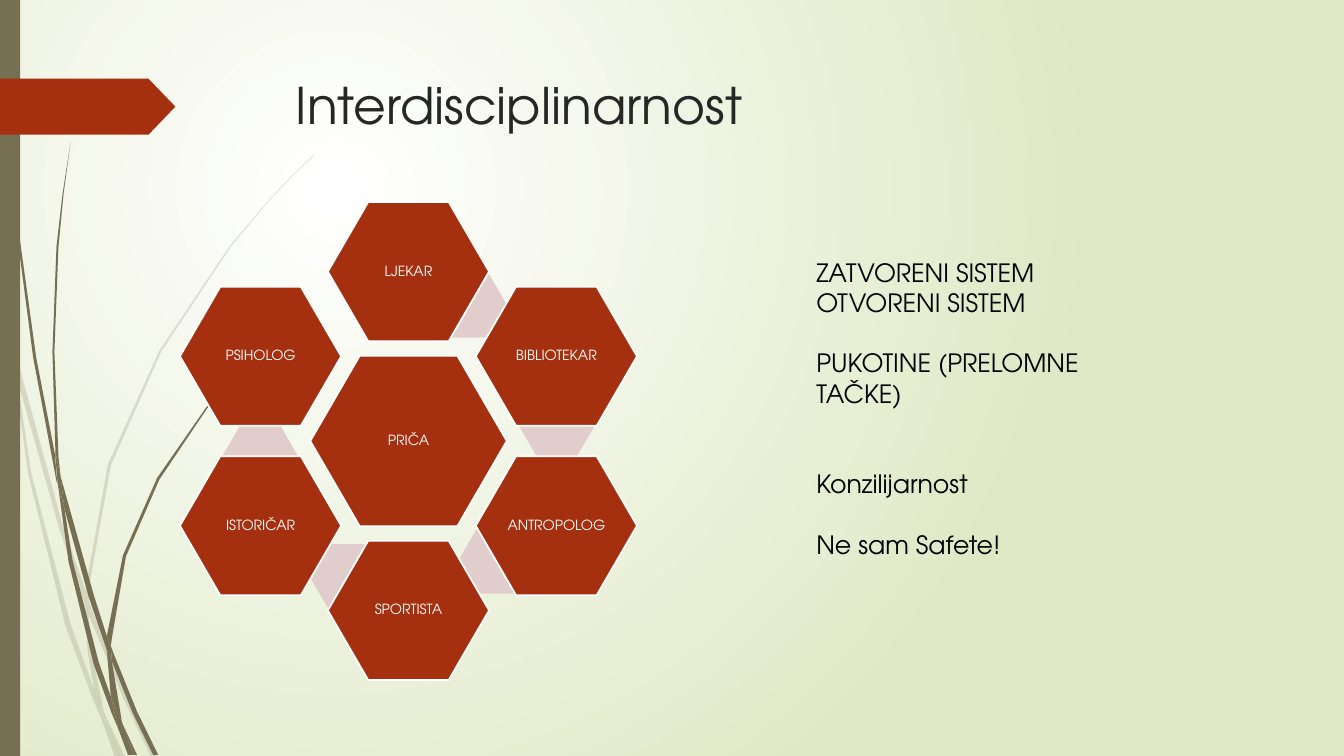
from math import cos, radians, sin

from lxml.etree import SubElement
from pptx import Presentation
from pptx.dml.color import RGBColor
from pptx.enum.shapes import MSO_SHAPE as Preset
from pptx.enum.text import MSO_ANCHOR as Anchor, PP_ALIGN as Align
from pptx.oxml.ns import qn
from pptx.util import Pt

FONT = "TeX Gyre Adventor"
RUST, OLIVE, ROSE, WHITE = "A53010", "766F54", "E1CDCC", "FFFFFF"
CENTER = (291.8, 315)
CELL_RING, LINK_RING, LINK_TURN = (122, 121), (106.4, 106), 24.5
ROLES = ["LJEKAR", "BIBLIOTEKAR", "ANTROPOLOG", "SPORTISTA", "ISTORIČAR", "PSIHOLOG"]
NOTES = [
    ("ZATVORENI SISTEM\vOTVORENI SISTEM", 0),
    ("PUKOTINE (PRELOMNE TAČKE)", 21.6),
    ("Konzilijarnost", 43.2),
    ("Ne sam Safete!", 21.6),
]
GRASS_UNIT = 0.72
PALE_GRASS = [
    [(11, 350), (9, 322), (0, 282), (0, 299), (10, 344)],
    [(58, 522), (84, 599), (85, 586), (62, 520), (14, 345), (17, 376)],
    [(92, 607), (88, 596), (88, 610), (123, 694), (150, 751), (155, 751), (127, 692)],
    [(119, 751), (124, 751), (105, 711)],
    [(93, 683), (70, 619), (31, 469), (17, 376), (11, 350), (28, 470), (65, 621),
     (92, 693), (101, 714), (99, 707)],
    [(84, 599), (87, 646), (93, 683), (96, 692), (105, 711), (103, 706), (91, 646),
     (88, 610), (88, 608)],
    [(88, 584), (110, 462), (160, 349), (229, 245), (268, 198), (290, 175), (312, 154),
     (312, 153), (289, 175), (268, 197), (228, 244), (158, 348), (107, 461), (85, 584),
     (85, 586), (88, 596)],
    [(101, 714), (114, 751), (119, 751)],
    [(88, 608), (88, 610), (88, 596), (85, 586), (84, 599)],
    [(96, 692), (93, 683), (99, 707), (101, 714), (119, 751), (105, 711)],
]
DARK_GRASS = [
    [(7, 110), (17, 233), (33, 355), (56, 477), (57, 481), (55, 457), (55, 453), (36, 355),
     (19, 232), (8, 109), (5, 48), (4, 0), (3, 0), (4, 48)],
    [(88, 592), (106, 645), (106, 633), (106, 631), (93, 590), (60, 472), (64, 505)],
    [(113, 649), (110, 641), (111, 656), (132, 708), (152, 749), (157, 749), (136, 706)],
    [(110, 691), (98, 657), (72, 556), (64, 505), (57, 477), (68, 557), (93, 659),
     (111, 708), (117, 722), (116, 717)],
    [(60, 472), (58, 453), (54, 349), (58, 245), (63, 193), (70, 141), (62, 193), (56, 245),
     (52, 349), (55, 449)],
    [(133, 749), (136, 749), (122, 719)],
    [(57, 477), (64, 505), (60, 472), (55, 449), (55, 453)],
    [(111, 633), (125, 552), (158, 476), (205, 406), (231, 374), (245, 359), (261, 344),
     (260, 344), (245, 358), (231, 373), (204, 405), (156, 474), (122, 551), (106, 631),
     (110, 641)],
    [(117, 722), (127, 749), (131, 749)],
    [(106, 645), (110, 691), (116, 706), (122, 719), (121, 716), (111, 656), (109, 651)],
    [(106, 645), (109, 651), (111, 656), (110, 641), (106, 631), (106, 633)],
    [(116, 706), (110, 691), (116, 717), (117, 722), (130, 749), (133, 749), (122, 719)],
]


def color(code):
    return RGBColor.from_string(code)


def around(ring, angle):
    turn = radians(angle)
    return CENTER[0] + ring[0] * sin(turn), CENTER[1] - ring[1] * cos(turn)


class StorySlide:
    """Draws the elements of one slide in a shared style."""

    def __init__(self, deck):
        self.slide = deck.slides.add_slide(deck.slide_layouts[5])
        self.shapes = self.slide.shapes

    def backdrop(self, inner, outer):
        fill = self.slide.background.fill
        fill.gradient()
        for stop, code, position in zip(fill.gradient_stops, (inner, outer), (0, 1)):
            stop.color.rgb = color(code)
            stop.position = position
        gradient = self.slide.element.find(".//" + qn("a:gradFill"))
        gradient.remove(gradient.find(qn("a:lin")))
        circle = SubElement(gradient, qn("a:path"), path="circle")
        SubElement(circle, qn("a:fillToRect"), l="50000", t="50000", r="100000", b="100000")

    def paint(self, shape, code, outline=None):
        shape.shadow.inherit = False
        shape.fill.solid()
        shape.fill.fore_color.rgb = color(code)
        if outline:
            shape.line.color.rgb = color(outline)
            shape.line.width = Pt(1.25)
        else:
            shape.line.fill.background()
        return shape

    def style(self, paragraph, size, code):
        for run in paragraph.runs:
            run.font.name = FONT
            run.font.size = Pt(size)
            run.font.color.rgb = color(code)

    def block(self, preset, left, top, width, height, code, outline=None):
        shape = self.shapes.add_shape(preset, Pt(left), Pt(top), Pt(width), Pt(height))
        return self.paint(shape, code, outline)

    def hexagon(self, center, width, height, code, label=None):
        x, y = center
        cell = self.block(Preset.HEXAGON, x - width / 2, y - height / 2, width, height,
                          code, WHITE if label else None)
        cell.adjustments[0] = 0.29
        if label:
            frame = cell.text_frame
            frame.margin_left = frame.margin_right = Pt(1)
            frame.margin_top = frame.margin_bottom = Pt(1)
            frame.vertical_anchor = Anchor.MIDDLE
            frame.text = label
            frame.paragraphs[0].alignment = Align.CENTER
            frame.paragraphs[0].line_spacing = 0.9
            self.style(frame.paragraphs[0], 10, WHITE)

    def blade(self, outline, opacity=None):
        edge = [(Pt(x * GRASS_UNIT), Pt(y * GRASS_UNIT)) for x, y in outline]
        builder = self.shapes.build_freeform(*edge[0])
        builder.add_line_segments(edge[1:])
        leaf = self.paint(builder.convert_to_shape(), OLIVE)
        if opacity:
            tint = leaf.element.find(".//" + qn("a:srgbClr"))
            SubElement(tint, qn("a:alpha"), val=str(opacity * 1000))

    def title(self, text, left, top, width, height):
        heading = self.shapes.title
        heading.left, heading.top = Pt(left), Pt(top)
        heading.width, heading.height = Pt(width), Pt(height)
        frame = heading.text_frame
        frame.text = text
        frame.vertical_anchor = Anchor.TOP
        frame.paragraphs[0].alignment = Align.LEFT
        self.style(frame.paragraphs[0], 36, "262626")

    def notes(self, entries, left, top, width, height):
        frame = self.shapes.add_textbox(Pt(left), Pt(top), Pt(width), Pt(height)).text_frame
        frame.word_wrap = True
        for i, (text, gap) in enumerate(entries):
            paragraph = frame.add_paragraph() if i else frame.paragraphs[0]
            paragraph.text = text
            paragraph.space_before = Pt(gap)
            self.style(paragraph, 18, "000000")


def main():
    deck = Presentation()
    deck.slide_width, deck.slide_height = Pt(960), Pt(540)
    story = StorySlide(deck)
    story.backdrop(WHITE, "DFE8C4")
    for outline in PALE_GRASS:
        story.blade(outline, opacity=20)
    for outline in DARK_GRASS:
        story.blade(outline)
    story.block(Preset.RECTANGLE, 0, 0, 14.4, 540, OLIVE)
    story.block(Preset.PENTAGON, 0, 56.2, 125.3, 40, RUST).adjustments[0] = 0.48
    story.title("Interdisciplinarnost", 204, 49, 702, 100.8)
    story.hexagon(CENTER, 140.4, 121.7, RUST, "PRIČA")
    for i, role in enumerate(ROLES):
        if i < len(ROLES) - 1:
            story.hexagon(around(LINK_RING, 60 * i + LINK_TURN), 53.3, 45.4, ROSE)
        story.hexagon(around(CELL_RING, 60 * i), 115.2, 99.4, RUST, role)
    story.notes(NOTES, 576, 180, 238.3, 203.8)
    deck.save("out.pptx")


if __name__ == "__main__":
    main()
